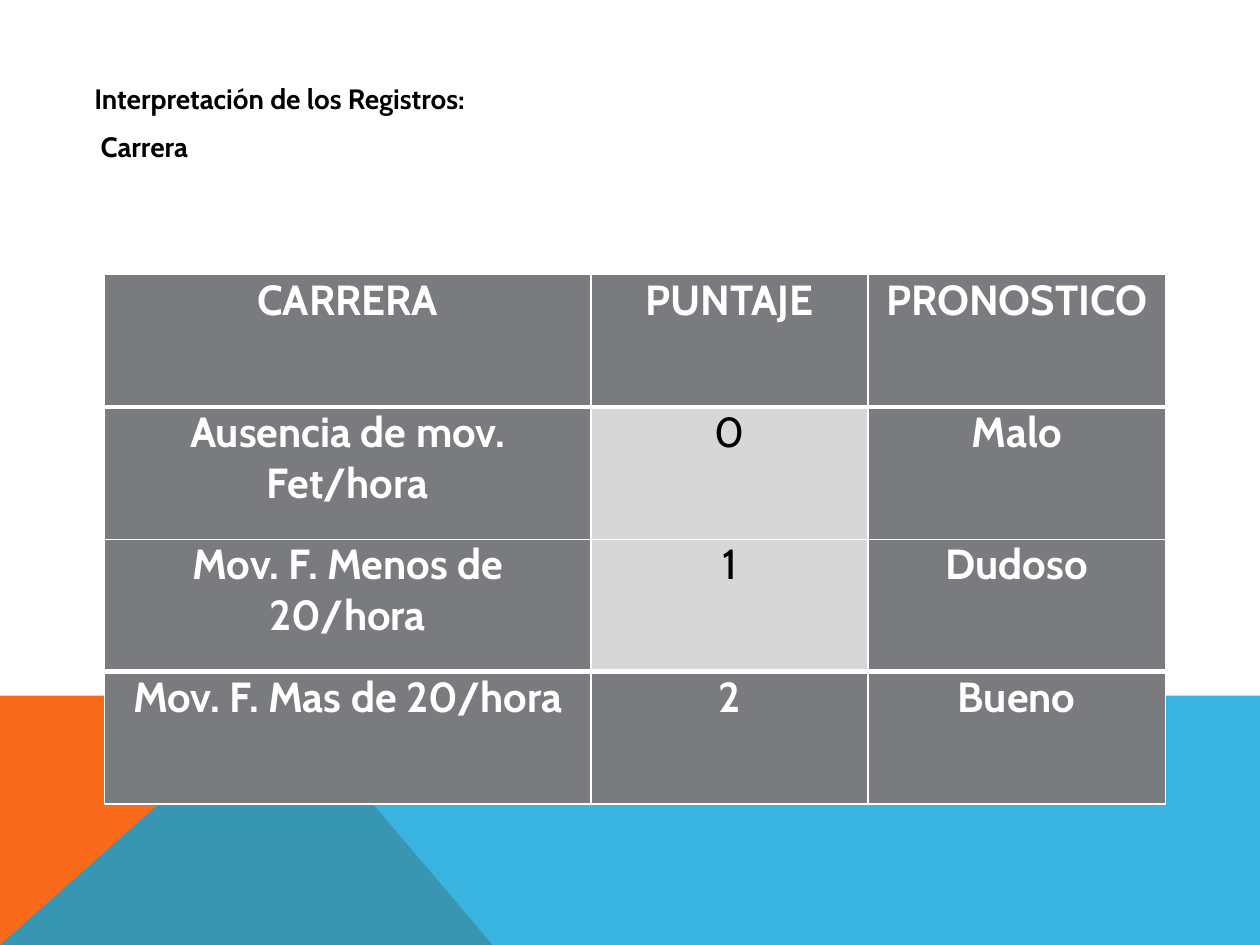
from dataclasses import dataclass

from lxml import etree
from pptx import Presentation
from pptx.dml.color import RGBColor
from pptx.enum import text
from pptx.oxml import ns
from pptx.util import Inches, Pt

WIDTH, HEIGHT = 10, 7.5
FONT = "Cabin"
WHITE, BLACK, GRAY, PALE = "FFFFFF", "000000", "797B7E", "D7D7D8"
BAND_TOP, BAND_PEAK = 0.736, 0.223


@dataclass(frozen=True)
class Band:
    corners: tuple[tuple[float, float], ...]
    color: str
    opacity: int = 100


@dataclass(frozen=True)
class Heading:
    wording: str
    indent: float


BANDS = (
    Band(((0, 1), (0, BAND_TOP), (BAND_PEAK, BAND_TOP), (0.391, 1)), "F96A1B"),
    Band(((0, 1), (BAND_PEAK, BAND_TOP), (1, BAND_TOP), (1, 1)), "08A1D9", 80),
)
HEADINGS = (
    Heading("Interpretación de los Registros:", 0.15),
    Heading("Carrera", 0.2),
)
ROWS = (
    ("CARRERA", "PUNTAJE", "PRONOSTICO"),
    ("Ausencia de mov. Fet/hora", "0", "Malo"),
    ("Mov. F. Menos de 20/hora", "1", "Dudoso"),
    ("Mov. F. Mas de 20/hora", "2", "Bueno"),
)
COLUMN_WIDTHS = (3.86, 2.2, 2.36)
ROW_HEIGHT = 1.05
THICK_RULES = (1, len(ROWS) - 1)


def rgb(color: str) -> RGBColor:
    return RGBColor.from_string(color)


def style_span(span, size: int, color: str, bold: bool) -> None:
    span.font.name = FONT
    span.font.size = Pt(size)
    span.font.bold = bold
    span.font.color.rgb = rgb(color)


def draw_band(page, band: Band) -> None:
    points = [(Inches(x * WIDTH), Inches(y * HEIGHT)) for x, y in band.corners]
    builder = page.shapes.build_freeform(*points[0])
    builder.add_line_segments(points[1:], close=True)
    shape = builder.convert_to_shape()
    shape.shadow.inherit = False
    shape.line.fill.background()
    shape.fill.solid()
    shape.fill.fore_color.rgb = rgb(band.color)
    if band.opacity < 100:
        tint = shape.fill._xPr.find(f".//{ns.qn('a:srgbClr')}")
        etree.SubElement(tint, ns.qn("a:alpha"), val=str(band.opacity * 1000))


def draw_headings(page, headings: tuple[Heading, ...]) -> None:
    box = page.shapes.add_textbox(Inches(0.5), Inches(0.6), Inches(9), Inches(1))
    frame = box.text_frame
    frame.word_wrap = True
    frame.text = "\n".join(heading.wording for heading in headings)
    for para, heading in zip(frame.paragraphs, headings):
        para.space_before = Pt(8)
        para._p.get_or_add_pPr().set("marL", str(Inches(heading.indent)))
        style_span(para.runs[0], 16, BLACK, True)


def draw_borders(cell, row: int) -> None:
    top = 3 if row in THICK_RULES else 1
    bottom = 3 if row + 1 in THICK_RULES else 1
    properties = cell._tc.get_or_add_tcPr()
    sides = (("lnL", 1), ("lnR", 1), ("lnT", top), ("lnB", bottom))
    for position, (side, points) in enumerate(sides):
        line = etree.Element(ns.qn(f"a:{side}"), w=str(Pt(points)))
        fill = etree.SubElement(line, ns.qn("a:solidFill"))
        etree.SubElement(fill, ns.qn("a:srgbClr"), val=WHITE)
        properties.insert(position, line)


def draw_cell(cell, wording: str, row: int, column: int) -> None:
    plain = column == 1 and row in (1, 2)
    cell.margin_left = cell.margin_right = Inches(0.07)
    cell.margin_top = cell.margin_bottom = 0
    cell.fill.solid()
    cell.fill.fore_color.rgb = rgb(PALE if plain else GRAY)
    cell.text_frame.text = wording
    para = cell.text_frame.paragraphs[0]
    para.alignment = text.PP_ALIGN.CENTER
    style_span(para.runs[0], 24, BLACK if plain else WHITE, not plain)
    draw_borders(cell, row)


def draw_scores(page) -> None:
    table = page.shapes.add_table(
        len(ROWS), len(COLUMN_WIDTHS), Inches(0.83), Inches(2.18),
        Inches(sum(COLUMN_WIDTHS)), Inches(ROW_HEIGHT * len(ROWS)),
    ).table
    table.horz_banding = False
    for column, width in zip(table.columns, COLUMN_WIDTHS):
        column.width = Inches(width)
    for row, wordings in enumerate(ROWS):
        table.rows[row].height = Inches(ROW_HEIGHT)
        for column, wording in enumerate(wordings):
            draw_cell(table.cell(row, column), wording, row, column)


def main() -> None:
    deck = Presentation()
    deck.slide_width, deck.slide_height = Inches(WIDTH), Inches(HEIGHT)
    page = deck.slides.add_slide(deck.slide_layouts[6])
    for band in BANDS:
        draw_band(page, band)
    draw_headings(page, HEADINGS)
    draw_scores(page)
    deck.save("out.pptx")


if __name__ == "__main__":
    main()
